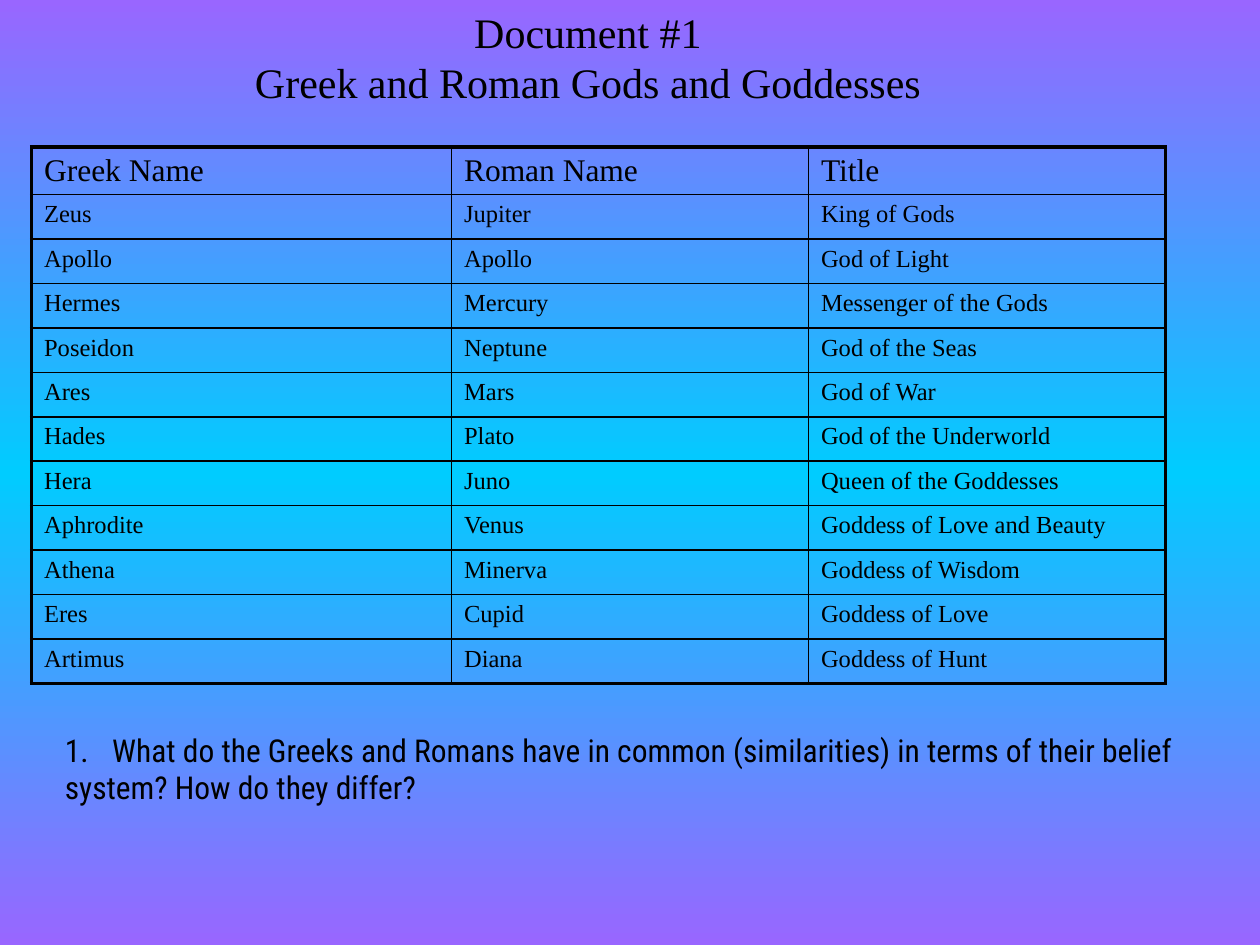
"""Build a slide that lists Greek and Roman gods above a discussion question."""
from copy import deepcopy
from dataclasses import dataclass
from typing import NamedTuple

from pptx import Presentation
from pptx.dml import color
from pptx.enum import text
from pptx.oxml import ns, xmlchemy
from pptx.util import Pt


@dataclass(frozen=True)
class Theme:
    """Colours, fonts, type sizes and line widths."""

    ink: str = "000000"
    violet: str = "9966FF"
    cyan: str = "00CCFF"
    serif: str = "Times New Roman"
    condensed: str = "Roboto Condensed"
    title: float = 24
    heading: float = 18
    body: float = 14
    frame: float = 2.25
    grid: float = 1


class Box(NamedTuple):
    """A position and size in points."""

    left: float
    top: float
    width: float
    height: float


class God(NamedTuple):
    """One row of the table."""

    greek: str
    roman: str
    title: str


THEME = Theme()
TITLE_BOX = Box(30, 0, 612, 90)
TABLE_BOX = Box(18, 84, 648, 306.6)
QUESTION_BOX = Box(30, 414, 672, 50.4)
COLUMN_WIDTHS = (240, 204, 204)
HEADER_HEIGHT = 27.2
HANGING = 27
TITLE_LINES = ("Document #1", "Greek and Roman Gods and Goddesses")
QUESTION_LINES = (
    "What do the Greeks and Romans have in common (similarities) in terms of their belief",
    "system? How do they differ?",
)
ROWS = (
    God("Greek Name", "Roman Name", "Title"),
    God("Zeus", "Jupiter", "King of Gods"),
    God("Apollo", "Apollo", "God of Light"),
    God("Hermes", "Mercury", "Messenger of the Gods"),
    God("Poseidon", "Neptune", "God of the Seas"),
    God("Ares", "Mars", "God of War"),
    God("Hades", "Plato", "God of the Underworld"),
    God("Hera", "Juno", "Queen of the Goddesses"),
    God("Aphrodite", "Venus", "Goddess of Love and Beauty"),
    God("Athena", "Minerva", "Goddess of Wisdom"),
    God("Eres", "Cupid", "Goddess of Love"),
    God("Artimus", "Diana", "Goddess of Hunt"),
)


def points(box: Box) -> list:
    """Convert a box to lengths."""
    return [Pt(value) for value in box]


def add_child(parent, tag: str, **attributes: str):
    """Append an XML element with attributes."""
    child = xmlchemy.OxmlElement(tag)
    for name, value in attributes.items():
        child.set(name, value)
    parent.append(child)
    return child


def add_run(paragraph, words: str, font: str, size: float) -> None:
    """Append a run in the theme's ink."""
    run = paragraph.add_run()
    run.text = words
    run.font.name = font
    run.font.size = Pt(size)
    run.font.color.rgb = color.RGBColor.from_string(THEME.ink)


def paint_background(slide) -> None:
    """Fill the slide with a vertical gradient of three stops."""
    fill = slide.background.fill
    fill.gradient()
    fill.gradient_angle = 270
    stop_list = slide.element.find(".//" + ns.qn("a:gsLst"))
    stop_list.insert(1, deepcopy(stop_list[0]))
    colours = (THEME.violet, THEME.cyan, THEME.violet)
    for index, (stop, colour) in enumerate(zip(fill.gradient_stops, colours)):
        stop.position = index / 2
        stop.color.rgb = color.RGBColor.from_string(colour)


def fill_title(slide) -> None:
    """Place the title and write its lines."""
    title = slide.shapes.title
    title.left, title.top, title.width, title.height = points(TITLE_BOX)
    frame = title.text_frame
    frame.auto_size = text.MSO_AUTO_SIZE.NONE
    frame.vertical_anchor = text.MSO_ANCHOR.TOP
    paragraph = frame.paragraphs[0]
    paragraph.alignment = text.PP_ALIGN.CENTER
    for index, line in enumerate(TITLE_LINES):
        if index:
            paragraph.add_line_break()
        add_run(paragraph, line, THEME.serif, THEME.title)


def add_border(cell, side: str, width: float) -> None:
    """Draw one side of a cell."""
    line = add_child(cell._tc.get_or_add_tcPr(), f"a:ln{side}", w=str(Pt(width)))
    add_child(add_child(line, "a:solidFill"), "a:srgbClr", val=THEME.ink)


def fill_cell(cell, words: str, size: float, outer_sides: str) -> None:
    """Write a clear cell with heavy lines on its outer sides."""
    for side in "LRTB":
        add_border(cell, side, THEME.frame if side in outer_sides else THEME.grid)
    cell.fill.background()
    paragraph = cell.text_frame.paragraphs[0]
    spacing = add_child(paragraph._p.get_or_add_pPr(), "a:spcBef")
    add_child(spacing, "a:spcPct", val="20000")
    add_run(paragraph, words, THEME.serif, size)


def add_gods_table(slide) -> None:
    """Add the table of names and titles."""
    last_row, last_column = len(ROWS) - 1, len(COLUMN_WIDTHS) - 1
    shape = slide.shapes.add_table(len(ROWS), len(COLUMN_WIDTHS), *points(TABLE_BOX))
    table = shape.table
    table.first_row = table.horz_banding = False
    for column, width in zip(table.columns, COLUMN_WIDTHS):
        column.width = Pt(width)
    body_height = (TABLE_BOX.height - HEADER_HEIGHT) / last_row
    for row, god in enumerate(ROWS):
        table.rows[row].height = Pt(body_height if row else HEADER_HEIGHT)
        size = THEME.body if row else THEME.heading
        for column, words in enumerate(god):
            edges = {"L": column == 0, "R": column == last_column,
                     "T": row == 0, "B": row == last_row}
            outer_sides = "".join(side for side, outer in edges.items() if outer)
            fill_cell(table.cell(row, column), words, size, outer_sides)


def add_question(slide) -> None:
    """Add the numbered question."""
    frame = slide.shapes.add_textbox(*points(QUESTION_BOX)).text_frame
    frame.word_wrap = True
    for index, line in enumerate(QUESTION_LINES):
        paragraph = frame.add_paragraph() if index else frame.paragraphs[0]
        properties = paragraph._p.get_or_add_pPr()
        properties.set("marL", str(Pt(HANGING)))
        properties.set("indent", str(-Pt(HANGING)))
        if index:
            add_child(properties, "a:buNone")
        else:
            add_child(properties, "a:buFontTx")
            add_child(properties, "a:buAutoNum", type="arabicPeriod")
        add_run(paragraph, line, THEME.condensed, THEME.heading)


def main() -> None:
    """Build and save the presentation."""
    presentation = Presentation()
    presentation.slide_width, presentation.slide_height = Pt(720), Pt(540)
    slide = presentation.slides.add_slide(presentation.slide_layouts[5])
    paint_background(slide)
    fill_title(slide)
    add_gods_table(slide)
    add_question(slide)
    presentation.save("out.pptx")


if __name__ == "__main__":
    main()
